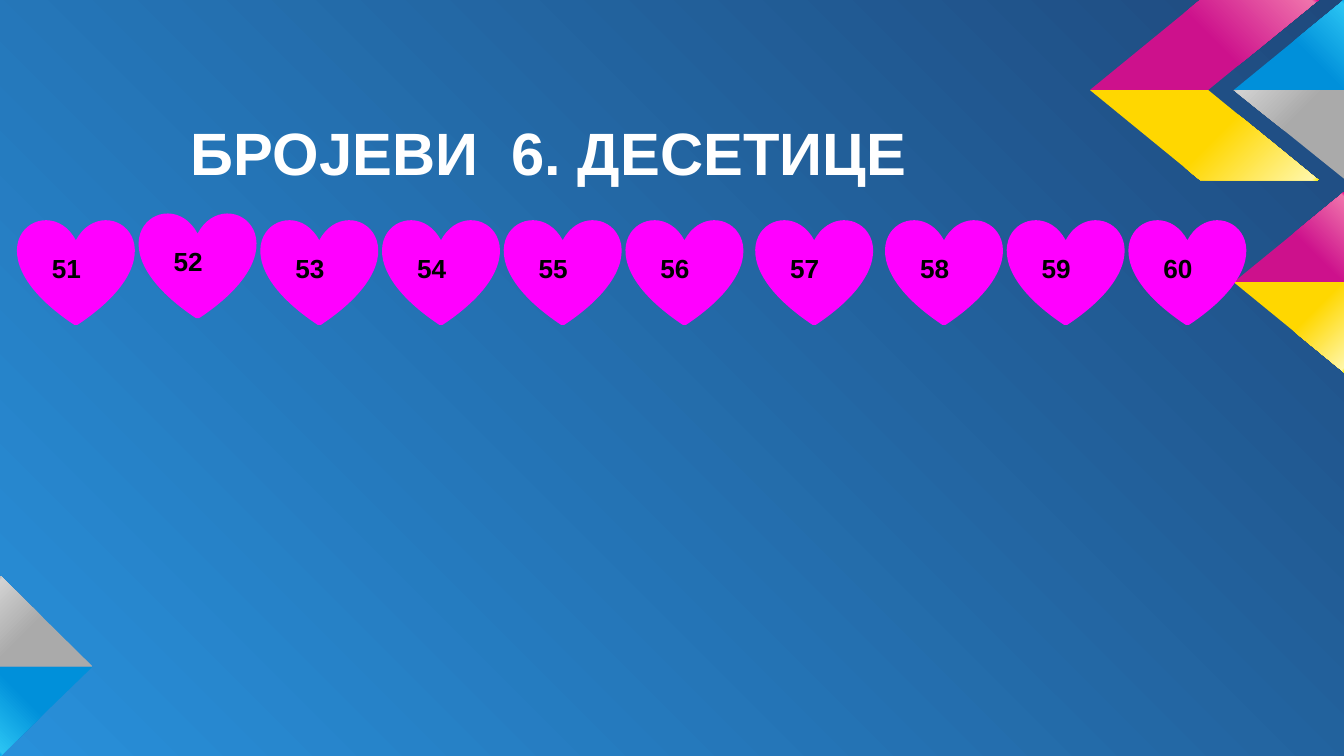
from lxml import etree
from pptx import Presentation
from pptx.dml.color import RGBColor
from pptx.enum.shapes import MSO_SHAPE
from pptx.enum.text import MSO_ANCHOR, PP_ALIGN
from pptx.oxml.ns import qn
from pptx.util import Inches, Pt

HEART = MSO_SHAPE.HEART
LEFT = PP_ALIGN.LEFT
MIDDLE = MSO_ANCHOR.MIDDLE

WHITE = RGBColor(0xFF, 0xFF, 0xFF)
BLACK = RGBColor(0, 0, 0)
MAGENTA = RGBColor(0xFF, 0, 0xFF)
SKY = RGBColor(0x28, 0x90, 0xDA)
NAVY = RGBColor(0x1F, 0x49, 0x7D)


def ramp(base, pale, end):
    """Gradient stops: flat over the first half, then a pale edge."""
    colors = (base, base, pale, end)
    return list(zip((0, 54, 98, 100), map(RGBColor.from_string, colors)))


BLUE = ramp("0090DA", "2BC4F3", "00AEEE")
GRAY = ramp("AAAAAA", "D2D2D2", "B9B9B9")
PINK = ramp("CD118C", "F074AC", "EB008B")
GOLD = ramp("FFD700", "FFF7A9", "FFF100")

TITLE = "БРОЈЕВИ  6. ДЕСЕТИЦЕ"
NUMBERS = range(51, 61)
RAISED = 52
WIDER = (57, 58)  # hearts with a wider gap before them
EXTRA = 0.06
FIRST, LAST = 0.15, 8.42  # left edges of the outer hearts
STEP = (LAST - FIRST - EXTRA * len(WIDER)) / (len(NUMBERS) - 1)

# stops, angle, corners in hundredths of an inch
RIBBONS = [
    (BLUE, 135, [(69, 496), (0, 496), (0, 562), (1, 562)]),
    (GRAY, 225, [(69, 496), (1, 429), (0, 429), (0, 496)]),
    (BLUE, 315, [(1000, 0), (918, 67), (1000, 67)]),
    (GRAY, 225, [(918, 67), (1000, 133), (1000, 67)]),
    (PINK, 315, [(899, 67), (981, 0), (893, 0), (811, 67)]),
    (PINK, 315, [(1000, 143), (918, 210), (1000, 210)]),
    (GOLD, 45, [(918, 210), (1000, 277), (1000, 210)]),
    (GOLD, 45, [(899, 67), (981, 134), (893, 134), (811, 67)]),
]


def shade(fill, root, stops, angle=None):
    """Fill with stops: linear at a clockwise angle, else round from bottom left."""
    fill.gradient()
    grad = root.find(".//" + qn("a:gradFill"))
    for child in list(grad):
        grad.remove(child)
    group = etree.SubElement(grad, qn("a:gsLst"))
    for pos, color in stops:
        stop = etree.SubElement(group, qn("a:gs"), pos=str(pos * 1000))
        etree.SubElement(stop, qn("a:srgbClr"), val=str(color))
    if angle is None:
        way = etree.SubElement(grad, qn("a:path"), path="circle")
        etree.SubElement(way, qn("a:fillToRect"), t="100000", r="100000")
    else:
        etree.SubElement(grad, qn("a:lin"), ang=str(angle * 60000), scaled="0")


def write(shape, text, size, color):
    frame = shape.text_frame
    frame.text = text
    frame.word_wrap = True
    frame.vertical_anchor = MIDDLE
    frame.margin_left = frame.margin_right = Inches(0.1)
    frame.margin_top = frame.margin_bottom = Inches(0.1)
    para = frame.paragraphs[0]
    para.alignment = LEFT
    font = para.font
    font.name, font.size, font.bold = "Arial", Pt(size), True
    font.color.rgb = color


def add_ribbon(slide, stops, angle, points):
    pen = slide.shapes.build_freeform(*points[0], scale=Inches(0.01))
    pen.add_line_segments(points[1:], close=True)
    shape = pen.convert_to_shape()
    shape.shadow.inherit = False
    shape.line.fill.background()
    shade(shape.fill, shape.element, stops, angle)


def add_heart(slide, number, left, top):
    heart = slide.shapes.add_shape(
        HEART, Inches(left), Inches(top), Inches(0.83), Inches(0.75))
    heart.shadow.inherit = False
    heart.fill.solid()
    heart.fill.fore_color.rgb = MAGENTA
    heart.line.color.rgb = MAGENTA
    heart.line.width = Pt(3)
    write(heart, str(number), 14, BLACK)


def main():
    prs = Presentation()
    prs.slide_width = Inches(10)
    prs.slide_height = prs.slide_width * 9 // 16
    slide = prs.slides.add_slide(prs.slide_layouts[5])
    shade(slide.background.fill, slide.element, [(0, SKY), (100, NAVY)])

    for ribbon in RIBBONS:
        add_ribbon(slide, *ribbon)

    title = slide.shapes.title
    title.left, title.top = Inches(1.32), Inches(0.78)
    title.width, title.height = Inches(6.7), Inches(0.7)
    write(title, TITLE, 32, WHITE)

    left = FIRST
    for number in NUMBERS:
        if number in WIDER:
            left += EXTRA
        add_heart(slide, number, left, 1.6 if number == RAISED else 1.65)
        left += STEP

    prs.save("out.pptx")


if __name__ == "__main__":
    main()
